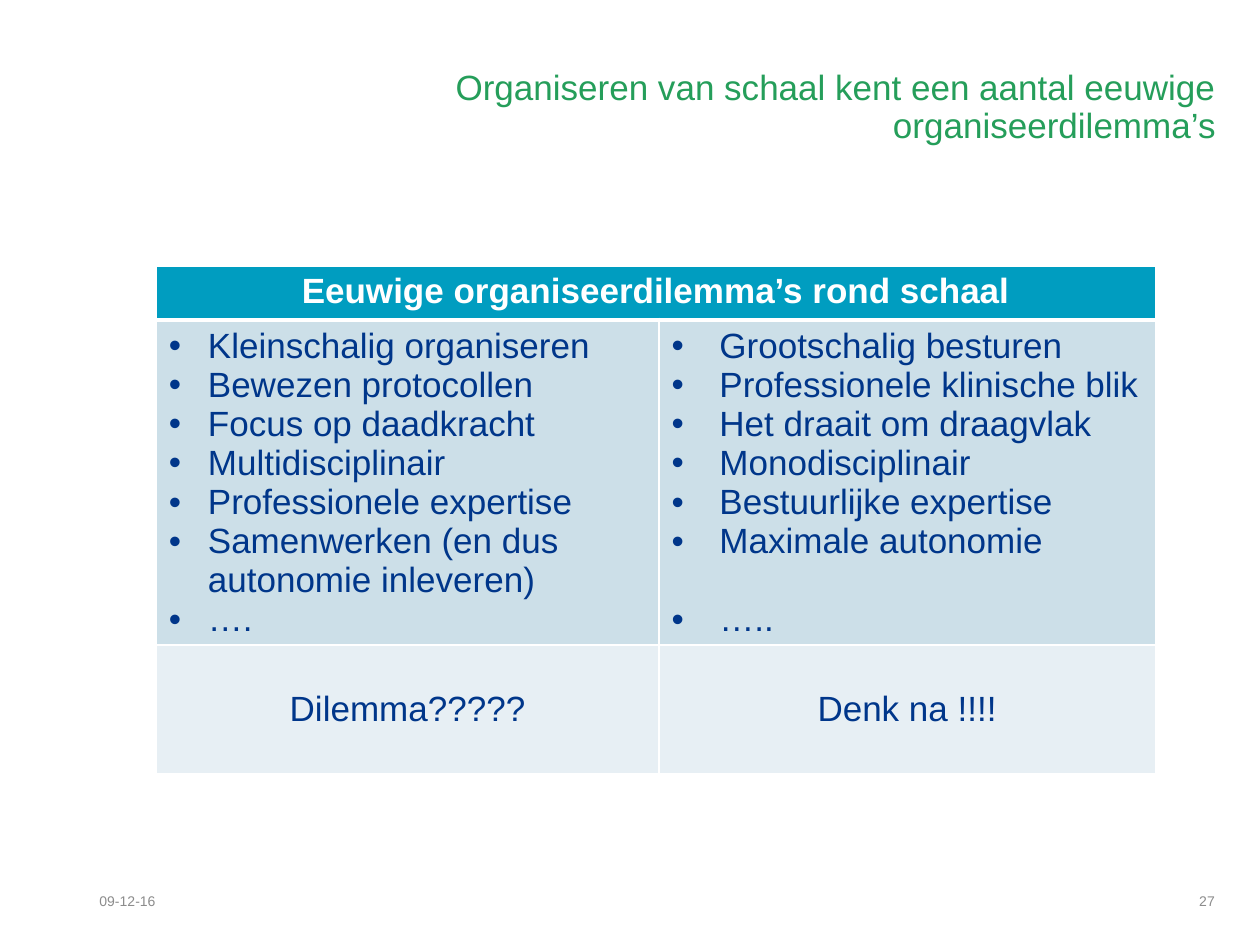
from lxml.etree import SubElement
from pptx import Presentation
from pptx.dml.color import RGBColor
from pptx.enum.text import MSO_ANCHOR, PP_ALIGN
from pptx.oxml.ns import qn
from pptx.util import Inches, Pt

GREEN = RGBColor(0x25, 0x9E, 0x5A)
GREY = RGBColor(0x8C, 0x8C, 0x8C)
NAVY = RGBColor(0x00, 0x36, 0x8A)
TEAL = RGBColor(0x00, 0x9D, 0xC0)
PALE_BLUE = RGBColor(0xCC, 0xDF, 0xE8)
LIGHT_BLUE = RGBColor(0xE7, 0xEF, 0xF4)
WHITE = RGBColor(0xFF, 0xFF, 0xFF)

PAGE_WIDTH, PAGE_HEIGHT = Inches(10), Inches(7.5)
FOOTER_TOP, FOOTER_HEIGHT = 0.927, 0.053
COLUMN_WIDTHS = (3.99, 3.94)
ROW_HEIGHTS = (0.43, 2.57, 1.02)
BULLET_INDENTS = (0.31, 0.38)
LINE_HEIGHT = 22.4

DILEMMAS = (
    ("Kleinschalig organiseren", "Bewezen protocollen", "Focus op daadkracht",
     "Multidisciplinair", "Professionele expertise",
     "Samenwerken (en dus autonomie inleveren)", "…."),
    ("Grootschalig besturen", "Professionele klinische blik",
     "Het draait om draagvlak", "Monodisciplinair", "Bestuurlijke expertise",
     "Maximale autonomie", "….."),
)
CLOSING = ("Dilemma?????", "Denk na !!!!")


def place(left, top, width, height):
    return (round(PAGE_WIDTH * left), round(PAGE_HEIGHT * top),
            round(PAGE_WIDTH * width), round(PAGE_HEIGHT * height))


def write(para, text, size=20, color=NAVY, bold=False, align=PP_ALIGN.LEFT,
          indent=None, before=0, spacing=1.0):
    para.alignment = align
    para.line_spacing = spacing
    para.space_before = Pt(before)
    if indent:
        properties = para._p.get_or_add_pPr()
        properties.set("marL", str(Inches(indent)))
        properties.set("indent", str(-Inches(indent)))
        SubElement(properties, qn("a:buFont"), typeface="Arial")
        SubElement(properties, qn("a:buChar"), char="•")
    span = para.add_run()
    span.text = text
    span.font.name = "Arial"
    span.font.size = Pt(size)
    span.font.bold = bold
    span.font.color.rgb = color


def add_title(page, text):
    title = page.shapes.title
    title.left, title.top, title.width, title.height = place(0.341, 0.068, 0.634, 0.179)
    title.text_frame.vertical_anchor = MSO_ANCHOR.TOP
    write(title.text_frame.paragraphs[0], text, color=GREEN,
          align=PP_ALIGN.RIGHT, spacing=0.9)


def add_footer(page, text, left, width, align):
    box = page.shapes.add_textbox(*place(left, FOOTER_TOP, width, FOOTER_HEIGHT))
    box.text_frame.word_wrap = True
    box.text_frame.vertical_anchor = MSO_ANCHOR.MIDDLE
    write(box.text_frame.paragraphs[0], text, size=8, color=GREY, align=align)


def style_cell(cell, fill, top=1, bottom=1):
    properties = cell._tc.get_or_add_tcPr()
    for side, width in (("L", 1), ("R", 1), ("T", top), ("B", bottom)):
        line = SubElement(properties, qn(f"a:ln{side}"), w=str(Pt(width)))
        solid = SubElement(line, qn("a:solidFill"))
        SubElement(solid, qn("a:srgbClr"), val=str(WHITE))
    cell.fill.solid()
    cell.fill.fore_color.rgb = fill
    cell.vertical_anchor = MSO_ANCHOR.TOP


def fill_bullets(cell, items, indent, last_gap):
    frame = cell.text_frame
    for number, item in enumerate(items):
        para = frame.add_paragraph() if number else frame.paragraphs[0]
        is_last = number == len(items) - 1
        write(para, item, indent=indent, before=last_gap if is_last else 0)


def add_dilemma_table(page):
    frame = page.shapes.add_table(
        len(ROW_HEIGHTS), len(COLUMN_WIDTHS), Inches(1.24), Inches(2.11),
        Inches(sum(COLUMN_WIDTHS)), Inches(sum(ROW_HEIGHTS)))
    table = frame.table
    for column, width in zip(table.columns, COLUMN_WIDTHS):
        column.width = Inches(width)
    for row, height in zip(table.rows, ROW_HEIGHTS):
        row.height = Inches(height)

    header = table.cell(0, 0)
    header.merge(table.cell(0, 1))
    write(header.text_frame.paragraphs[0], "Eeuwige organiseerdilemma’s rond schaal",
          color=WHITE, bold=True, align=PP_ALIGN.CENTER)

    for column, indent in enumerate(BULLET_INDENTS):
        style_cell(table.cell(0, column), TEAL, bottom=3)
        body, closing = table.cell(1, column), table.cell(2, column)
        style_cell(body, PALE_BLUE, top=3)
        fill_bullets(body, DILEMMAS[column], indent, LINE_HEIGHT * column)
        style_cell(closing, LIGHT_BLUE)
        closing.vertical_anchor = MSO_ANCHOR.MIDDLE
        write(closing.text_frame.paragraphs[0], CLOSING[column], align=PP_ALIGN.CENTER)


def main():
    deck = Presentation()
    deck.slide_width, deck.slide_height = PAGE_WIDTH, PAGE_HEIGHT
    page = deck.slides.add_slide(deck.slide_layouts[5])
    add_title(page, "Organiseren van schaal kent een aantal eeuwige organiseerdilemma’s")
    add_dilemma_table(page)
    add_footer(page, "09-12-16", 0.069, 0.225, PP_ALIGN.LEFT)
    add_footer(page, "27", 0.706, 0.268, PP_ALIGN.RIGHT)
    deck.save("out.pptx")


if __name__ == "__main__":
    main()
